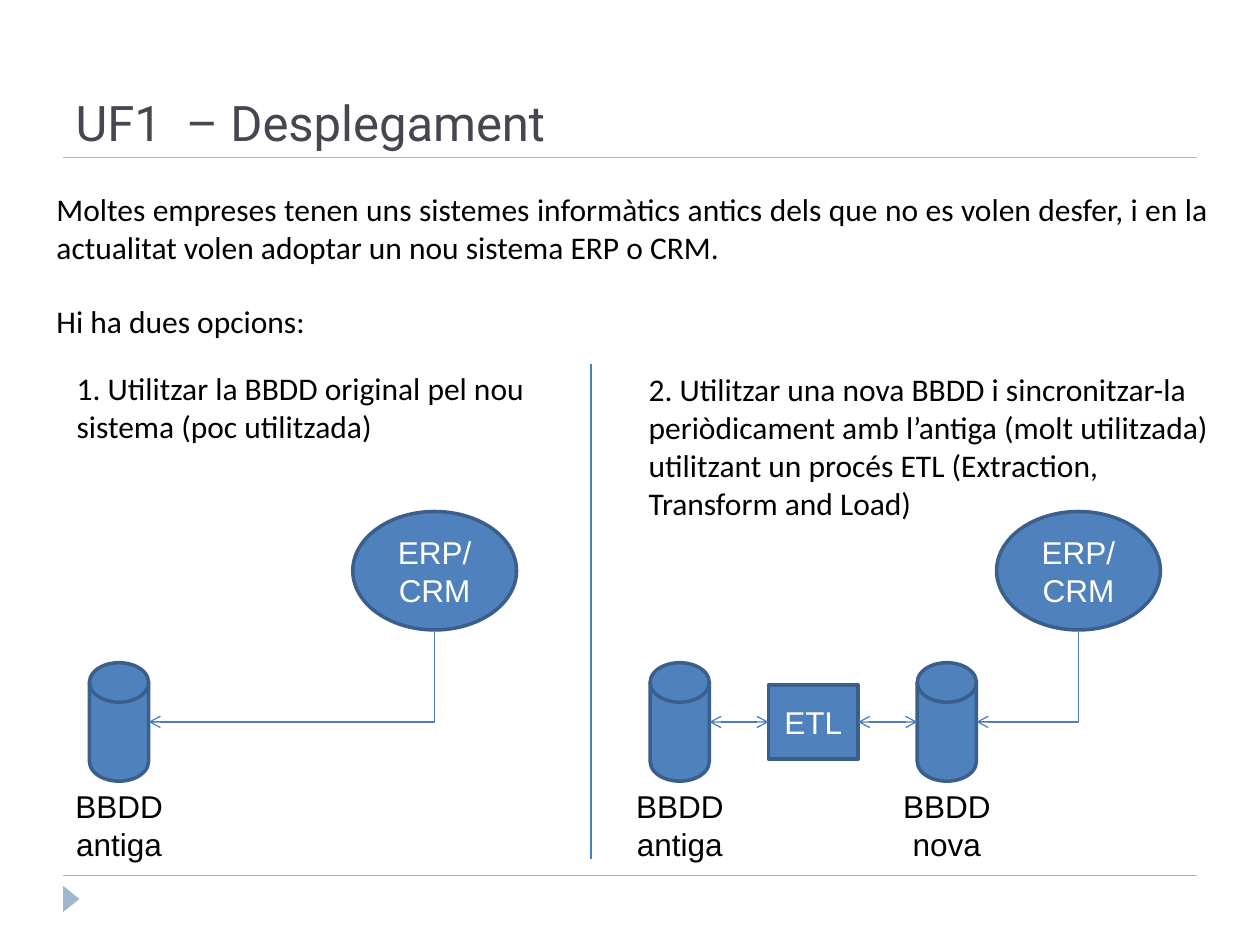
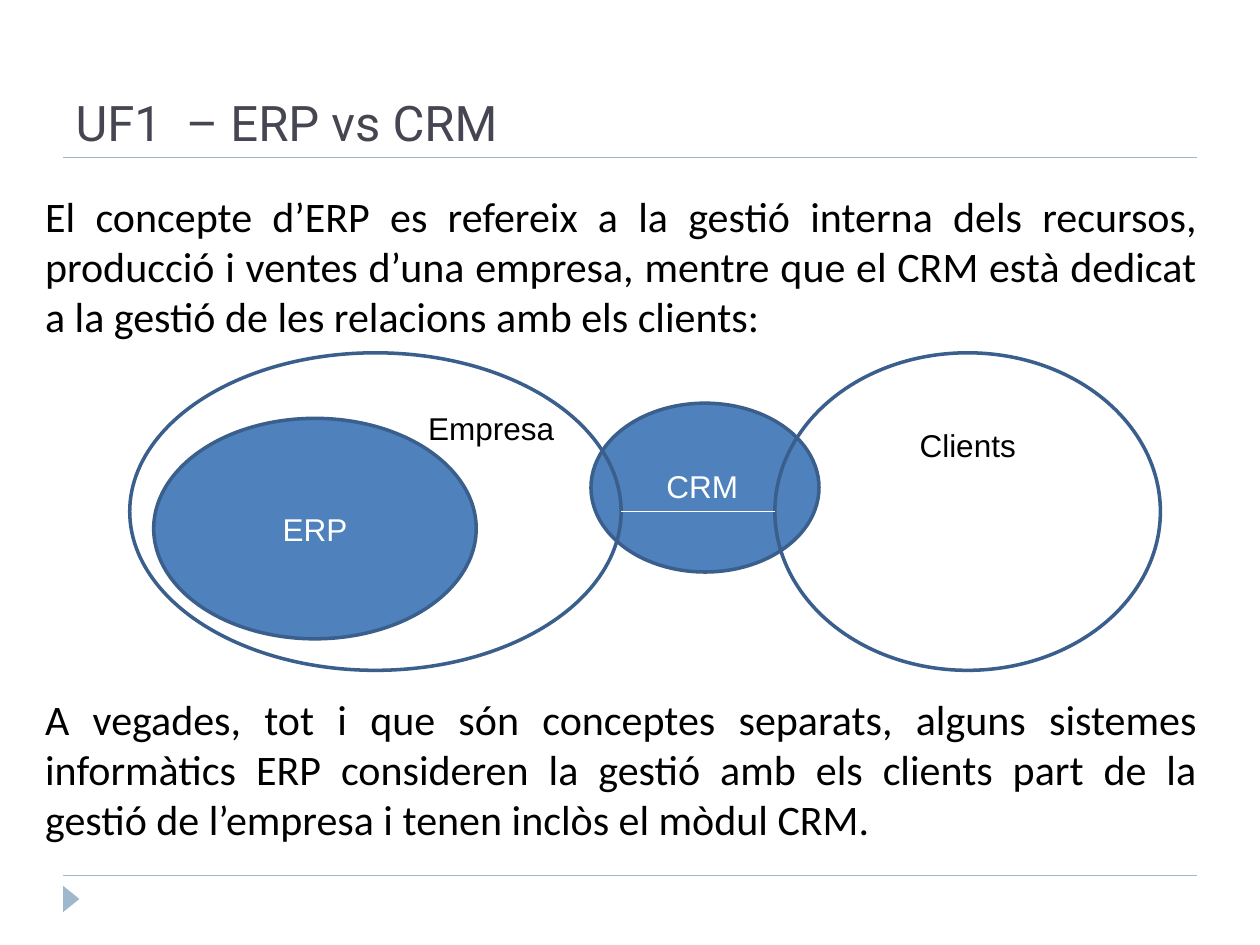
from lxml import etree
from pptx import Presentation
from pptx.dml.color import RGBColor
from pptx.enum.shapes import MSO_CONNECTOR, MSO_SHAPE
from pptx.enum.text import MSO_ANCHOR, PP_ALIGN
from pptx.oxml.ns import qn
from pptx.util import Inches, Pt

STRAIGHT, ELBOW = MSO_CONNECTOR.STRAIGHT, MSO_CONNECTOR.ELBOW
ELLIPSE, RECTANGLE = MSO_SHAPE.OVAL, MSO_SHAPE.RECTANGLE
DISK, TRIANGLE = MSO_SHAPE.FLOWCHART_MAGNETIC_DISK, MSO_SHAPE.ISOSCELES_TRIANGLE
LEFT, CENTER, JUSTIFY = PP_ALIGN.LEFT, PP_ALIGN.CENTER, PP_ALIGN.JUSTIFY
BOTTOM, MIDDLE = MSO_ANCHOR.BOTTOM, MSO_ANCHOR.MIDDLE

WIDTH, HEIGHT = Inches(10), Inches(7.5)
COLUMNS, ROWS = 100, 75
BODY_FONT, LABEL_FONT, TITLE_FONT = "Calibri", "Arial", "Roboto"
INK, WHITE, TITLE_GREY = "000000", "FFFFFF", "464653"
BLUE, OUTLINE, LINK, BAND = "4F81BD", "3A5F8C", "4B7EBC", "9FB8CD"

DISK_WIDTH, DISK_HEIGHT, DISK_TOP = 4.7, 9.4, 52.6
FLOW_ROW = DISK_TOP + DISK_HEIGHT / 2
SYSTEM_WIDTH, SYSTEM_HEIGHT, SYSTEM_TOP = 13, 9.4, 40.6
CAPTION_WIDTH = 11.1


def color(value):
    """Turn a hex string into a colour."""
    return RGBColor.from_string(value)


def across(columns):
    """Turn grid columns into a length."""
    return round(WIDTH * columns / COLUMNS)


def down(rows):
    """Turn grid rows into a length."""
    return round(HEIGHT * rows / ROWS)


def grid(left, top, width, height):
    """Turn a grid cell range into position and size."""
    return across(left), down(top), across(width), down(height)


def write(frame, paragraphs, size, font, ink, align=LEFT, gap=0):
    """Fill a text frame, with a gap in points between paragraphs."""
    frame.word_wrap = True
    for number, content in enumerate(paragraphs):
        paragraph = frame.add_paragraph() if number else frame.paragraphs[0]
        paragraph.alignment = align
        paragraph.space_before = Pt(gap if number else 0)
        run = paragraph.add_run()
        run.text = content
        run.font.size = Pt(size)
        run.font.name = font
        run.font.color.rgb = color(ink)


def add_text(slide, area, paragraphs, size=18, font=BODY_FONT, ink=INK, align=LEFT, gap=0):
    """Add a wrapped text box."""
    box = slide.shapes.add_textbox(*grid(*area))
    write(box.text_frame, paragraphs, size, font, ink, align, gap)


def add_figure(slide, kind, area, label="", fill=BLUE, outline=OUTLINE):
    """Add a preset shape with an optional centred label."""
    figure = slide.shapes.add_shape(kind, *grid(*area))
    figure.shadow.inherit = False
    if fill:
        figure.fill.solid()
        figure.fill.fore_color.rgb = color(fill)
    else:
        figure.fill.background()
    if outline:
        figure.line.color.rgb = color(outline)
        figure.line.width = Pt(2)
    else:
        figure.line.fill.background()
    if label:
        figure.text_frame.vertical_anchor = MIDDLE
        write(figure.text_frame, [label], 18, LABEL_FONT, WHITE, CENTER)
    return figure


def add_link(slide, start, end, ink=LINK, heads=(), kind=STRAIGHT):
    """Add a thin connector with arrowheads at the named ends."""
    link = slide.shapes.add_connector(
        kind, across(start[0]), down(start[1]), across(end[0]), down(end[1]))
    link.line.color.rgb = color(ink)
    link.line.width = Pt(0.75)
    properties = link._element.spPr
    if kind == ELBOW:
        properties.find(qn("a:prstGeom")).set("prst", "bentConnector2")
    for head in heads:
        etree.SubElement(properties.find(qn("a:ln")), qn("a:" + head), type="arrow")
    etree.SubElement(properties, qn("a:effectLst"))


def add_page(deck, heading):
    """Add a slide with its title, rules and corner marker."""
    slide = deck.slides.add_slide(deck.slide_layouts[5])
    title = slide.shapes.title
    title.left, title.top, title.width, title.height = grid(5, 2.2, 87.2, 10.3)
    title.text_frame.vertical_anchor = BOTTOM
    write(title.text_frame, [heading], 28, TITLE_FONT, TITLE_GREY)
    for row in (12.5, 69.5):
        add_link(slide, (5, row), (95, row), BAND)
    marker = add_figure(slide, TRIANGLE, (4.6, 70.7, 2.1, 1.3), fill=BAND, outline=None)
    marker.rotation = 90
    return slide


def add_database(slide, left, caption):
    """Add a database disk with its caption centred below."""
    add_figure(slide, DISK, (left, DISK_TOP, DISK_WIDTH, DISK_HEIGHT))
    caption_left = left + (DISK_WIDTH - CAPTION_WIDTH) / 2
    add_text(slide, (caption_left, DISK_TOP + DISK_HEIGHT, CAPTION_WIDTH, 7.1),
             [caption], font=LABEL_FONT, align=CENTER)


def add_system(slide, left, database_left):
    """Add the ERP/CRM system and its elbow link to a database."""
    add_figure(slide, ELLIPSE, (left, SYSTEM_TOP, SYSTEM_WIDTH, SYSTEM_HEIGHT), "ERP/CRM")
    add_link(slide, (database_left + DISK_WIDTH, FLOW_ROW),
             (left + SYSTEM_WIDTH / 2, SYSTEM_TOP + SYSTEM_HEIGHT),
             heads=["headEnd"], kind=ELBOW)


def build_deployment(deck):
    """Build the slide that compares the two deployment options."""
    slide = add_page(deck, "UF1  – Desplegament")
    add_text(slide, (3.5, 14.6, 93.4, 14), [
        "Moltes empreses tenen uns sistemes informàtics antics dels que no es volen "
        "desfer, i en la actualitat volen adoptar un nou sistema ERP o CRM.",
        "Hi ha dues opcions:"], align=JUSTIFY, gap=21)
    add_text(slide, (5.1, 28.8, 43.6, 7.1),
             ["1. Utilitzar la BBDD original pel nou sistema (poc utilitzada)"])
    add_text(slide, (50.5, 28.9, 46.7, 13.1), [
        "2. Utilitzar una nova BBDD i sincronitzar-la periòdicament amb l’antiga "
        "(molt utilitzada) utilitzant un procés ETL (Extraction, Transform and Load)"])
    add_link(slide, (46.9, 28.9), (46.9, 68.2))

    kept, old, new = 7.1, 51.6, 72.8
    for left, caption in ((kept, "BBDD antiga"), (old, "BBDD antiga"), (new, "BBDD nova")):
        add_database(slide, left, caption)
    add_system(slide, 28, kept)
    add_system(slide, 79.1, new)

    etl_left, etl_width, etl_height = 61, 7.1, 5.9
    add_figure(slide, RECTANGLE,
               (etl_left, FLOW_ROW - etl_height / 2, etl_width, etl_height), "ETL")
    for start, end in ((old + DISK_WIDTH, etl_left), (etl_left + etl_width, new)):
        add_link(slide, (start, FLOW_ROW), (end, FLOW_ROW), heads=["headEnd", "tailEnd"])


def build_comparison(deck):
    """Build the slide that relates ERP, CRM, company and clients."""
    slide = add_page(deck, "UF1  – ERP vs CRM")
    add_figure(slide, ELLIPSE, (46.9, 32, 18.1, 13.4))
    add_text(slide, (2.6, 14.6, 93.4, 53), [
        "El concepte d’ERP es refereix a la gestió interna dels recursos, producció i "
        "ventes d’una empresa, mentre que el CRM està dedicat a la gestió de les "
        "relacions amb els clients:",
        "A vegades, tot i que són conceptes separats, alguns sistemes informàtics ERP "
        "consideren la gestió amb els clients part de la gestió de l’empresa i tenen "
        "inclòs el mòdul CRM."], size=24, align=JUSTIFY, gap=201)
    add_figure(slide, ELLIPSE, (12.2, 33.2, 25.6, 17.5), "ERP")
    for left, width in ((10.3, 39), (61.5, 30.6)):
        add_figure(slide, ELLIPSE, (left, 28, width, 25.2), fill=None)
    add_link(slide, (49.3, 40.6), (61.5, 40.6), WHITE)
    for left, top, label, ink in ((33, 32, "Empresa", INK), (72, 33.3, "Clients", INK),
                                  (51.9, 36.6, "CRM", WHITE)):
        add_text(slide, (left, top, 15.4, 4), [label], font=LABEL_FONT, ink=ink)


def main():
    """Build and save the presentation."""
    deck = Presentation()
    deck.slide_width, deck.slide_height = WIDTH, HEIGHT
    build_deployment(deck)
    build_comparison(deck)
    deck.save("out.pptx")


if __name__ == "__main__":
    main()
